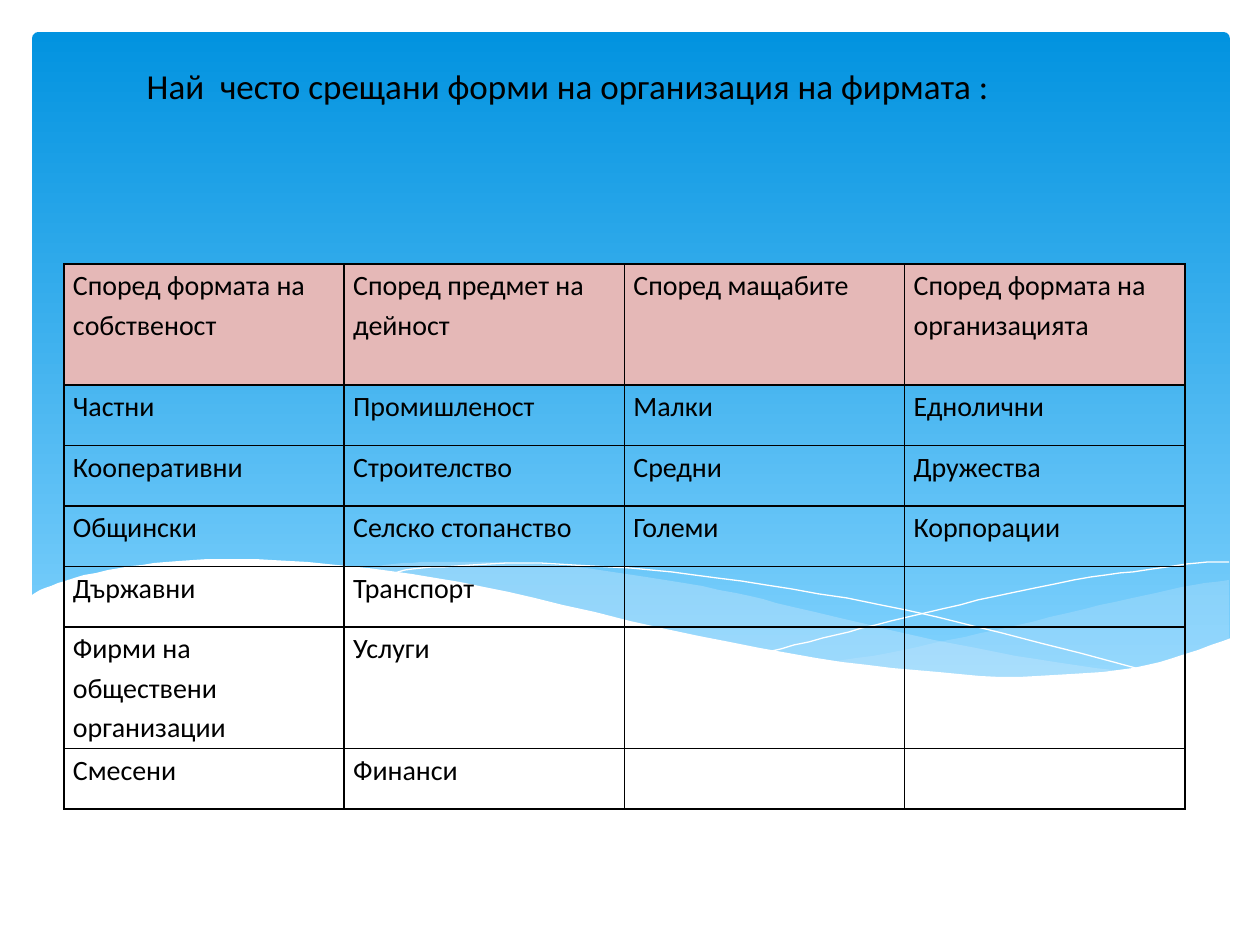
from dataclasses import dataclass
from typing import Any

from lxml.etree import SubElement
from pptx import Presentation
from pptx.dml.color import RGBColor
from pptx.enum.shapes import MSO_SHAPE
from pptx.enum.text import MSO_ANCHOR as ANCHOR, PP_ALIGN as ALIGN
from pptx.oxml import parse_xml
from pptx.oxml.ns import nsdecls, qn
from pptx.util import Pt

SCALE = 914400 / 126
FORMS = [
    ("Според формата на собственост", "Според предмет на дейност",
     "Според мащабите", "Според формата на организацията"),
    ("Частни", "Промишленост", "Малки", "Еднолични"),
    ("Кооперативни", "Строителство", "Средни", "Дружества"),
    ("Общински", "Селско стопанство", "Големи", "Корпорации"),
    ("Държавни", "Транспорт", "", ""),
    ("Фирми на обществени организации", "Услуги", "", ""),
    ("Смесени", "Финанси", "", ""),
]
ROW_UNITS = (2, 1, 1, 1, 1, 2, 1)
RIGHT_TOP = [(1229, 580), (1194, 585), (1142, 596), (1085, 609), (1014, 626),
             (949, 640), (889, 653), (833, 662)]
RIGHT_BOTTOM = [(833, 662), (906, 673), (969, 678), (1026, 678), (1076, 675),
                (1120, 670), (1160, 663), (1196, 651), (1229, 639)]
MIDDLE_TOP = [(360, 570), (394, 564), (433, 562), (503, 562), (586, 568), (665, 580),
              (736, 593), (793, 607), (890, 630), (976, 648), (1055, 662), (1125, 672)]
MIDDLE_BOTTOM = [(1125, 672), (1068, 677), (1003, 679), (926, 674), (838, 663), (757, 649),
                 (668, 631), (566, 607), (509, 593), (456, 583), (407, 575), (360, 570)]
FALLING = [(389, 575), (413, 569), (457, 566), (524, 563), (591, 566), (672, 572),
           (766, 585), (876, 604), (1002, 633), (1143, 670)]
RISING = [(772, 651), (823, 638), (876, 625), (942, 609), (1016, 592), (1091, 577),
          (1146, 570), (1198, 563), (1229, 562)]
FRONT = [(1231, 638), (1185, 654), (1133, 668), (1071, 674), (1000, 677), (915, 670),
         (816, 658), (699, 636), (563, 605), (460, 582), (368, 568), (290, 561),
         (223, 559), (166, 562), (120, 568), (74, 578), (45, 588), (29, 596)]


def px(length):
    """Turn pixels into EMU."""
    return round(length * SCALE)


def rgb(code):
    """Turn a hex string into a colour."""
    return RGBColor.from_string(code)


def assign(target, **values):
    """Set attributes from format values."""
    for name, value in values.items():
        setattr(target, name, value)


def curve(knots, steps=4):
    """Return points of a smooth curve through the knots."""
    padded = [knots[0], *knots, knots[-1]]
    points = [knots[0]]
    for a, b, c, d in zip(padded, padded[1:], padded[2:], padded[3:]):
        for step in range(1, steps + 1):
            t = step / steps
            points.append(tuple(
                (2 * q + (r - p) * t + (2 * p - 5 * q + 4 * r - s) * t ** 2
                 + (3 * q - p - 3 * r + s) * t ** 3) / 2
                for p, q, r, s in zip(a, b, c, d)))
    return points


@dataclass
class Board:
    """Hold the style and the current slide."""
    slide: Any
    font: str = "Calibri"
    ink: str = "000000"
    header: str = "E5B8B7"

    def label(self, paragraph, text, size, **layout):
        """Put one styled run into a paragraph."""
        assign(paragraph, line_spacing=1.15, **layout)
        run = paragraph.add_run()
        run.text = text
        assign(run.font, name=self.font, size=Pt(size), bold=False)
        run.font.color.rgb = rgb(self.ink)

    def panel(self, left, top, width, height, colours):
        """Add a rounded panel with a vertical gradient."""
        panel = self.slide.shapes.add_shape(
            MSO_SHAPE.ROUNDED_RECTANGLE, *map(px, (left, top, width, height)))
        panel.adjustments[0] = 0.01
        panel.shadow.inherit = False
        panel.line.fill.background()
        panel.fill.gradient()
        panel.fill.gradient_angle = 270
        for stop, colour in zip(panel.fill.gradient_stops, colours):
            stop.color.rgb = rgb(colour)

    def outline(self, points, closed):
        """Add a plain freeform without a shadow."""
        builder = self.slide.shapes.build_freeform(*points[0], scale=SCALE)
        builder.add_line_segments(points[1:], close=closed)
        outline = builder.convert_to_shape()
        outline.shadow.inherit = False
        return outline

    def wave(self, points, colour, opacity=100):
        """Add a filled wave."""
        wave = self.outline(points, True)
        wave.line.fill.background()
        wave.fill.solid()
        wave.fill.fore_color.rgb = rgb(colour)
        if opacity < 100:
            tint = wave._element.spPr.find(qn("a:solidFill"))[0]
            SubElement(tint, qn("a:alpha")).set("val", str(opacity * 1000))

    def thread(self, points, colour):
        """Add a hairline curve."""
        thread = self.outline(points, False)
        thread.fill.background()
        thread.line.color.rgb = rgb(colour)
        thread.line.width = 0

    def title(self, left, top, width, height, text):
        """Add the centred heading."""
        frame = self.slide.shapes.add_textbox(
            *map(px, (left, top, width, height))).text_frame
        assign(frame, word_wrap=True, vertical_anchor=ANCHOR.TOP, margin_top=px(13))
        self.label(frame.paragraphs[0], text, 20, alignment=ALIGN.CENTER)

    def border(self, cell):
        """Draw a thin line on each side of a cell."""
        properties = cell._tc.get_or_add_tcPr()
        for place, side in enumerate("LRTB"):
            properties.insert(place, parse_xml(
                f'<a:ln{side} {nsdecls("a")} w="12700"><a:solidFill>'
                f'<a:srgbClr val="{self.ink}"/></a:solidFill></a:ln{side}>'))

    def grid(self, left, top, width, height, rows, units):
        """Add a bordered table with a tinted header row."""
        table = self.slide.shapes.add_table(
            len(rows), len(rows[0]), *map(px, (left, top, width, height))).table
        assign(table, first_row=False, horz_banding=False)
        for number, (texts, unit) in enumerate(zip(rows, units)):
            table.rows[number].height = px(height * unit / sum(units))
            for cell, text in zip(table.rows[number].cells, texts):
                assign(cell, margin_left=px(9), margin_right=px(9),
                       margin_top=0, margin_bottom=0)
                if number == 0:
                    cell.fill.solid()
                    cell.fill.fore_color.rgb = rgb(self.header)
                else:
                    cell.fill.background()
                self.border(cell)
                if text:
                    self.label(cell.text_frame.paragraphs[0], text, 16)


def main():
    """Build the slide and save it."""
    deck = Presentation()
    assign(deck, slide_width=px(1260), slide_height=px(945))
    board = Board(deck.slides.add_slide(deck.slide_layouts[6]))
    board.panel(32, 32, 1198, 653, ("0293E0", "83D3FE"))
    board.wave(curve(RIGHT_TOP) + curve(RIGHT_BOTTOM), "C6E7FC", 29)
    board.wave(curve(MIDDLE_TOP) + curve(MIDDLE_BOTTOM), "C6E7FC", 40)
    for knots in (FALLING, RISING):
        board.thread(curve(knots), "FFFFFF")
    board.wave(curve(FRONT) + [(29, 742), (1231, 742)], "FFFFFF")
    board.title(64, 45, 1008, 149, "Най  често срещани форми на организация на фирмата :")
    board.grid(64, 264, 1121, 545, FORMS, ROW_UNITS)
    deck.save("out.pptx")


if __name__ == "__main__":
    main()
